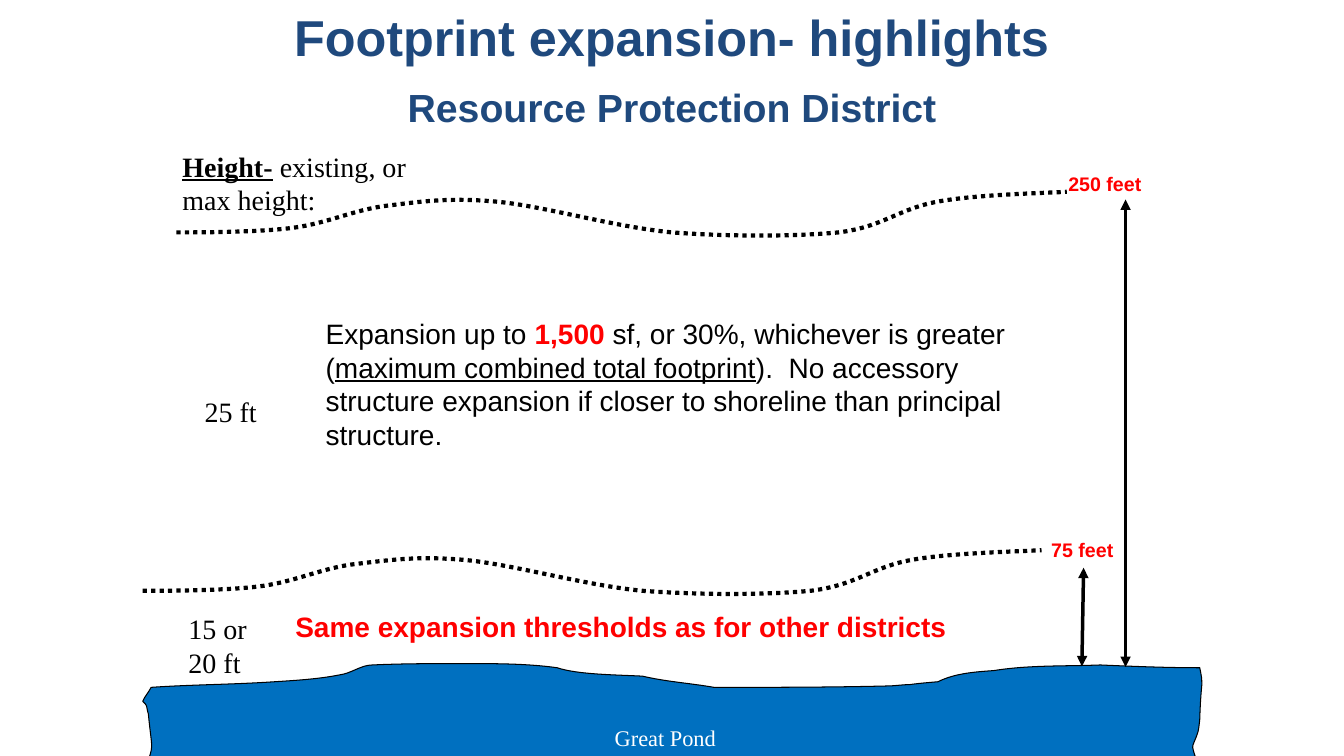
from lxml import etree
from pptx import Presentation
from pptx import util as u
from pptx.dml.color import RGBColor
from pptx.enum import dml, shapes, text
from pptx.oxml import ns

COLORS = {
    "navy": "1F497D",
    "red": "FF0000",
    "black": "000000",
    "white": "FFFFFF",
    "water": "0070C0",
}
SANS = "Arial"
SERIF = "Times New Roman"

CONTOUR = [
    (0, 29),
    (14, 29), (56, 29), (81, 26),
    (107, 23), (126, 13), (150, 10),
    (175, 7), (194, 4), (228, 7),
    (262, 10), (312, 25), (354, 29),
    (394, 32), (441, 32), (473, 29),
    (505, 25), (516, 12), (544, 7),
    (571, 2), (618, 1), (636, 0),
]
CONTOUR_WIDTH = 636

POND = [
    (108, 491),
    (137, 489), (166, 489), (196, 487),
    (212, 486), (228, 485), (243, 482),
    (251, 481), (258, 475), (266, 475),
    (287, 474), (310, 474), (332, 474),
    (354, 474), (377, 474), (398, 477),
    (413, 482), (441, 482), (459, 483),
    (476, 487), (493, 488), (510, 491),
    (552, 491), (593, 491), (634, 490),
    (639, 490), (645, 489), (650, 489),
    (657, 488), (670, 487), (670, 487),
    (682, 481), (696, 480), (710, 479),
    (735, 475), (760, 476), (786, 475),
    (809, 476), (833, 477), (857, 477),
    (860, 492), (858, 482), (857, 514),
    (856, 523), (856, 523), (853, 530),
    (852, 531), (852, 534), (852, 534),
    (853, 540), (857, 547), (857, 554),
    (724, 557), (925, 553), (674, 554),
    (627, 554), (532, 556), (532, 556),
    (390, 555), (247, 550), (104, 550),
    (110, 529), (109, 540), (106, 510),
    (104, 503), (106, 505), (102, 501),
    (103, 498), (106, 495), (108, 491),
]


def color(name):
    return RGBColor.from_string(COLORS[name])


def add_span(para, words, font=SANS, size=20, ink="black", bold=False, underline=False):
    span = para.add_run()
    span.text = words
    span.font.name = font
    span.font.size = u.Pt(size)
    span.font.color.rgb = color(ink)
    span.font.bold = bold
    span.font.underline = underline


def add_label(page, left, top, width, height, spans, wrap=True, **style):
    box = page.shapes.add_textbox(u.Pt(left), u.Pt(top), u.Pt(width), u.Pt(height))
    box.text_frame.word_wrap = wrap
    for words, changes in spans:
        add_span(box.text_frame.paragraphs[0], words, **{**style, **changes})


def set_title(page, lines):
    title = page.shapes.title
    title.left, title.top, title.width, title.height = u.Pt(120), 0, u.Pt(720), u.Pt(97)
    frame = title.text_frame
    frame.word_wrap = True
    frame.auto_size = text.MSO_AUTO_SIZE.NONE
    frame.vertical_anchor = text.MSO_ANCHOR.MIDDLE
    for index, (words, size) in enumerate(lines):
        para = frame.add_paragraph() if index else frame.paragraphs[0]
        para.alignment = text.PP_ALIGN.CENTER
        para.space_before = u.Pt(12 if index else 0)
        add_span(para, words, size=size, ink="navy", bold=True)


def add_curve(page, points, closed=False):
    builder = page.shapes.build_freeform(*points[0], scale=u.Pt(1))
    builder.add_line_segments(points[1:], close=closed)
    curve = builder.convert_to_shape()
    segments = list(curve._element.iter(ns.qn("a:lnTo")))
    for start in range(0, len(segments), 3):
        bezier = etree.Element(ns.qn("a:cubicBezTo"))
        segments[start].addprevious(bezier)
        for segment in segments[start:start + 3]:
            bezier.append(segment[0])
            segment.getparent().remove(segment)
    curve.shadow.inherit = False
    curve.line.color.rgb = color("black")
    return curve


def add_pond(page):
    pond = add_curve(page, POND, closed=True)
    pond.fill.solid()
    pond.fill.fore_color.rgb = color("water")
    pond.line.width = u.Pt(0.75)


def add_contour(page, left, top, width):
    scale = width / CONTOUR_WIDTH
    contour = add_curve(page, [(left + x * scale, top + y) for x, y in CONTOUR])
    contour.fill.background()
    contour.line.width = u.Pt(3)
    contour.line.dash_style = dml.MSO_LINE.ROUND_DOT


def add_arrow(page, *ends):
    arrow = page.shapes.add_connector(shapes.MSO_CONNECTOR.STRAIGHT, *map(u.Pt, ends))
    arrow.line.color.rgb = color("black")
    arrow.line.width = u.Pt(2.5)
    for end in ("a:headEnd", "a:tailEnd"):
        etree.SubElement(arrow.line._get_or_add_ln(), ns.qn(end), type="triangle")
    etree.SubElement(arrow._element.spPr, ns.qn("a:effectLst"))


def main():
    deck = Presentation()
    deck.slide_width, deck.slide_height = u.Pt(960), u.Pt(540)
    page = deck.slides.add_slide(deck.slide_layouts[5])

    set_title(page, [("Footprint expansion- highlights", 36), ("Resource Protection District", 28)])
    add_pond(page)
    add_contour(page, 126, 137, 636)
    add_contour(page, 102, 393, 642)
    add_arrow(page, 774, 405.5, 772.8, 476)
    add_arrow(page, 804, 142.5, 804, 476.5)

    distance = {"size": 14, "ink": "red", "bold": True}
    add_label(page, 743.8, 381, 66, 24, [("75 feet", {})], **distance)
    add_label(page, 756, 119, 78, 24, [("250 feet", {})], **distance)
    add_label(page, 203.8, 431.5, 486, 32,
              [("Same expansion thresholds as for other districts", {})], ink="red", bold=True)
    add_label(page, 123.2, 103, 178.5, 55,
              [("Height-", {"bold": True, "underline": True}), (" existing, or max height:", {})],
              font=SERIF)
    add_label(page, 139, 278, 54, 32, [("25 ft", {})], font=SERIF)
    add_label(page, 432, 513.5, 87, 26.5, [("Great Pond", {})],
              wrap=False, font=SERIF, size=16, ink="white")
    add_label(page, 225.5, 222.5, 536, 104, [
        ("Expansion up to ", {}),
        ("1,500", {"ink": "red", "bold": True}),
        (" sf, or 30%, whichever is greater (", {}),
        ("maximum combined total footprint", {"underline": True}),
        (").  No accessory structure expansion if closer to shoreline than principal structure.", {}),
    ])
    add_label(page, 127.5, 433.5, 76, 55, [("15 or 20 ft", {})], font=SERIF)

    deck.save("out.pptx")


if __name__ == "__main__":
    main()
